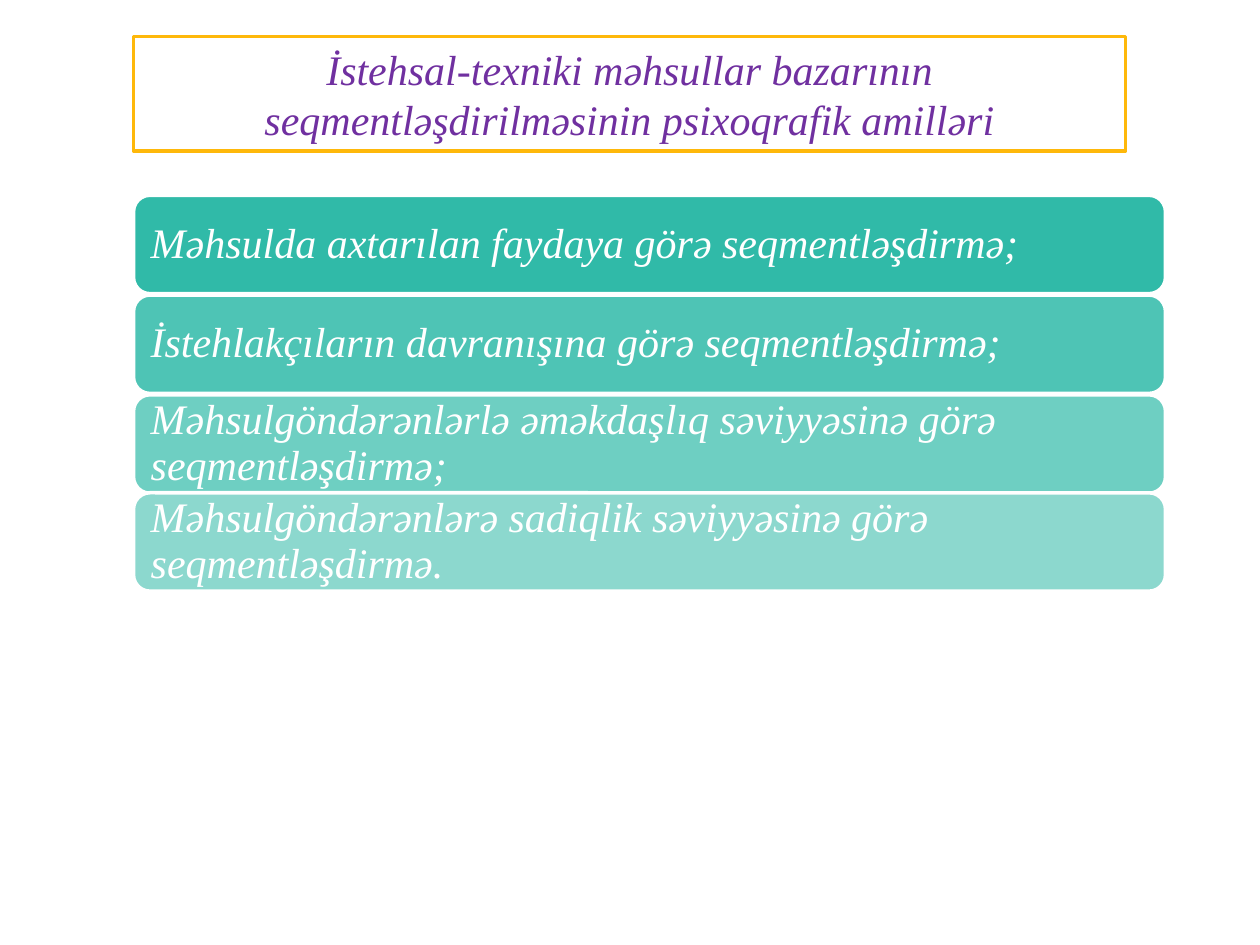
from lxml.etree import SubElement
from pptx import Presentation
from pptx.dml.color import RGBColor
from pptx.enum.shapes import MSO_SHAPE
from pptx.enum.text import MSO_ANCHOR, PP_ALIGN
from pptx.oxml.ns import qn
from pptx.util import Pt

WHITE = RGBColor(0xFF, 0xFF, 0xFF)
TEAL = RGBColor(0x1A, 0xB3, 0x9F)
AMBER = RGBColor(0xFE, 0xB8, 0x0A)
PURPLE = RGBColor(0x70, 0x30, 0xA0)

TITLE = "İstehsal-texniki məhsullar bazarının seqmentləşdirilməsinin psixoqrafik amilləri"
# Text, top in points, opacity in percent
FACTORS = [
    ("Məhsulda axtarılan faydaya görə seqmentləşdirmə;", 111.6, 90),
    ("İstehlakçıların davranışına görə seqmentləşdirmə;", 168.6, 77),
    ("Məhsulgöndərənlərlə əməkdaşlıq səviyyəsinə görə seqmentləşdirmə;", 225.6, 63),
    ("Məhsulgöndərənlərə sadiqlik səviyyəsinə görə seqmentləşdirmə.", 281.6, 50),
]


def write(tf, text, color, align=PP_ALIGN.LEFT, spacing=1.0, font="Times New Roman", size=24):
    tf.word_wrap = True
    tf.vertical_anchor = MSO_ANCHOR.MIDDLE
    p = tf.paragraphs[0]
    p.alignment = align
    p.line_spacing = spacing
    r = p.add_run()
    r.text = text
    r.font.name = font
    r.font.size = Pt(size)
    r.font.italic = True
    r.font.color.rgb = color


class FactorSlide:
    left = 76.3
    line_width = 2

    def __init__(self, prs):
        self.s = prs.slides.add_slide(prs.slide_layouts[6])

    def box(self, kind, top, width, height, fill, line):
        sp = self.s.shapes.add_shape(kind, Pt(self.left), Pt(top), Pt(width), Pt(height))
        sp.shadow.inherit = False
        sp.fill.solid()
        sp.fill.fore_color.rgb = fill
        sp.line.color.rgb = line
        sp.line.width = Pt(self.line_width)
        return sp

    def title(self, text):
        sp = self.box(MSO_SHAPE.RECTANGLE, 20.9, 566.9, 65.4, WHITE, AMBER)
        write(sp.text_frame, text, PURPLE, align=PP_ALIGN.CENTER)

    def bar(self, text, top, opacity):
        sp = self.box(MSO_SHAPE.ROUNDED_RECTANGLE, top, 589.7, 56.2, TEAL, WHITE)
        color = sp.fill._xPr.find(qn("a:solidFill"))[0]
        SubElement(color, qn("a:alpha"), val=str(opacity * 1000))
        tf = sp.text_frame
        tf.margin_left = tf.margin_right = tf.margin_top = tf.margin_bottom = Pt(7.2)
        write(tf, text, WHITE, spacing=0.9)


def main():
    prs = Presentation()
    prs.slide_width, prs.slide_height = Pt(720), Pt(540)
    slide = FactorSlide(prs)
    for text, top, opacity in FACTORS:
        slide.bar(text, top, opacity)
    slide.title(TITLE)
    prs.save("out.pptx")


if __name__ == "__main__":
    main()
